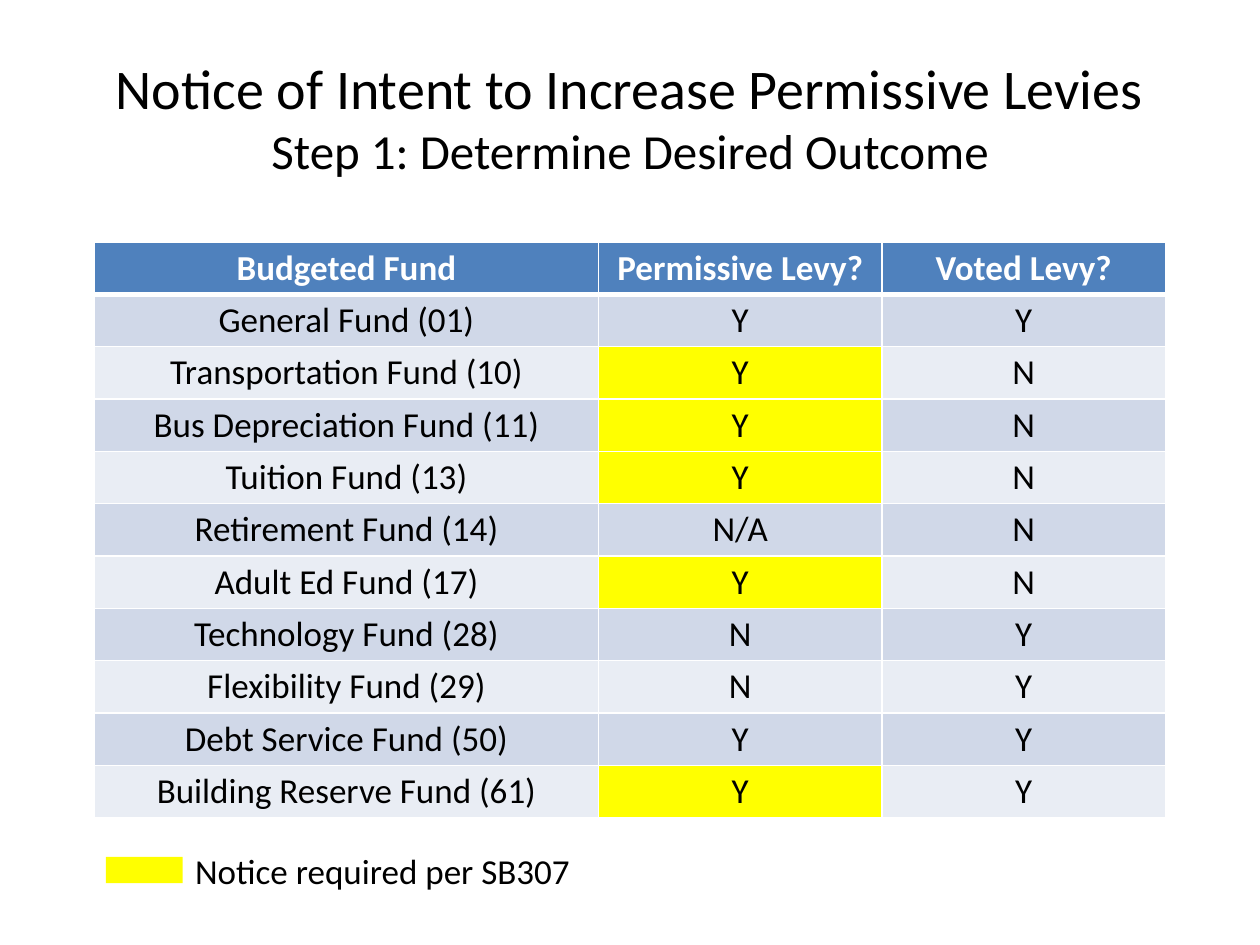
from lxml.etree import SubElement
from pptx import Presentation
from pptx.dml.color import RGBColor
from pptx.enum.shapes import MSO_SHAPE as Shape
from pptx.enum.text import MSO_ANCHOR as Anchor, PP_ALIGN as Align
from pptx.oxml.ns import qn
from pptx.util import Inches, Pt

WIDTH, HEIGHT = Inches(10), Inches(7.5)
FONT = "Calibri"
BLACK, WHITE, YELLOW = "000000", "FFFFFF", "FFFF00"
HEADER_BLUE = "4F81BD"
BANDS = ("D0D8E8", "E9EDF4")

COLUMN_WIDTHS = (4, 2.25, 2.25)
HEADINGS = ("Budgeted Fund", "Permissive Levy?", "Voted Levy?")
# Fund, permissive levy, voted levy, notice required
FUNDS = (
    ("General Fund (01)", "Y", "Y", False),
    ("Transportation Fund (10)", "Y", "N", True),
    ("Bus Depreciation Fund (11)", "Y", "N", True),
    ("Tuition Fund (13)", "Y", "N", True),
    ("Retirement Fund (14)", "N/A", "N", False),
    ("Adult Ed Fund (17)", "Y", "N", True),
    ("Technology Fund (28)", "N", "Y", False),
    ("Flexibility Fund (29)", "N", "Y", False),
    ("Debt Service Fund (50)", "Y", "Y", False),
    ("Building Reserve Fund (61)", "Y", "Y", True),
)


def color(hex_value):
    return RGBColor.from_string(hex_value)


def fill(target, hex_value):
    target.fill.solid()
    target.fill.fore_color.rgb = color(hex_value)


def write(paragraph, text, size=20, hex_value=BLACK, bold=False, align=Align.LEFT):
    paragraph.alignment = align
    run = paragraph.add_run()
    run.text = text
    run.font.name, run.font.size, run.font.bold = FONT, Pt(size), bold
    run.font.color.rgb = color(hex_value)


def add_text_box(slide, left, top, width, height, wrap=True, anchor=Anchor.TOP):
    box = slide.shapes.add_textbox(Inches(left), Inches(top), Inches(width), Inches(height))
    box.text_frame.word_wrap = wrap
    box.text_frame.vertical_anchor = anchor
    return box.text_frame.paragraphs[0]


def add_borders(cell, bottom=1):
    properties = cell._tc.get_or_add_tcPr()
    for side, width in (("L", 1), ("R", 1), ("T", 1), ("B", bottom)):
        line = SubElement(properties, qn(f"a:ln{side}"), w=str(Pt(width)))
        solid = SubElement(line, qn("a:solidFill"))
        SubElement(solid, qn("a:srgbClr"), val=WHITE)


def format_cell(cell, text, background, bottom=1, **text_format):
    cell.margin_left = cell.margin_right = Pt(5.4)
    cell.margin_top = cell.margin_bottom = Pt(2.7)
    # Borders come before the fill in the cell properties
    add_borders(cell, bottom)
    fill(cell, background)
    write(cell.text_frame.paragraphs[0], text, align=Align.CENTER, **text_format)


def add_title(slide):
    title = add_text_box(slide, 0.5, 0.3, 9, 1.25, anchor=Anchor.MIDDLE)
    write(title, "Notice of Intent to Increase Permissive Levies", size=32, align=Align.CENTER)
    title.add_line_break()
    write(title, "Step 1: Determine Desired Outcome", size=28, align=Align.CENTER)


def add_fund_table(slide):
    table = slide.shapes.add_table(
        len(FUNDS) + 1, len(HEADINGS), Inches(0.75), Inches(1.92),
        Inches(sum(COLUMN_WIDTHS)), Inches(4.49),
    ).table
    for column, width in zip(table.columns, COLUMN_WIDTHS):
        column.width = Inches(width)
    for col, heading in enumerate(HEADINGS):
        # The heavier header rule is shared with the row below
        format_cell(table.cell(0, col), heading, HEADER_BLUE, bottom=3,
                    hex_value=WHITE, bold=True)
    for row, (*values, notice) in enumerate(FUNDS, start=1):
        band = BANDS[(row - 1) % 2]
        for col, value in enumerate(values):
            background = YELLOW if notice and col == 1 else band
            format_cell(table.cell(row, col), value, background)
    # The first fund row keeps the header's rule on top
    for col in range(len(HEADINGS)):
        top_rule = table.cell(1, col)._tc.tcPr.find(qn("a:lnT"))
        top_rule.set("w", str(Pt(3)))


def add_legend(slide):
    swatch = slide.shapes.add_shape(
        Shape.RECTANGLE, Inches(0.84), Inches(6.8), Inches(0.61), Inches(0.21))
    swatch.shadow.inherit = False
    fill(swatch, YELLOW)
    swatch.line.fill.background()
    label = add_text_box(slide, 1.45, 6.69, 3.21, 0.44, wrap=False)
    write(label, "Notice required per SB307")


def main():
    deck = Presentation()
    deck.slide_width, deck.slide_height = WIDTH, HEIGHT
    slide = deck.slides.add_slide(deck.slide_layouts[6])
    add_fund_table(slide)
    add_legend(slide)
    add_title(slide)
    deck.save("out.pptx")


if __name__ == "__main__":
    main()
